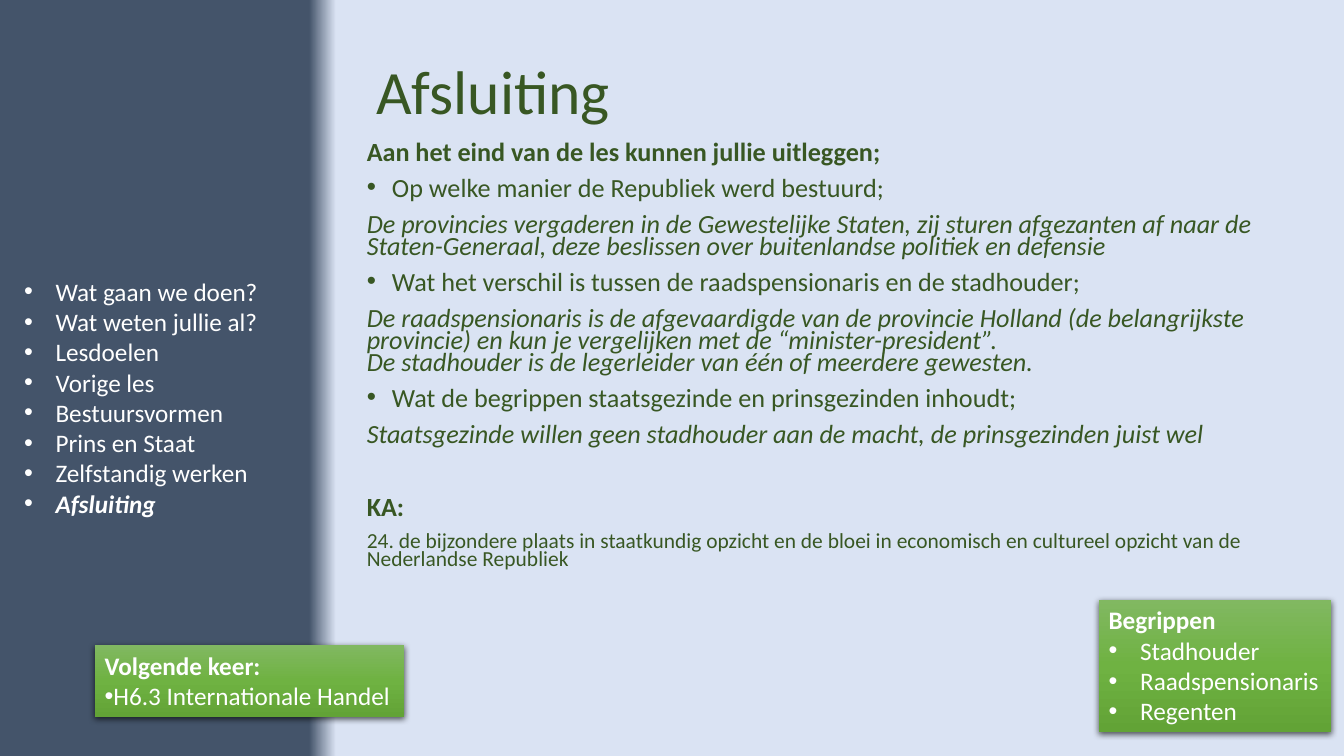
from lxml.etree import SubElement
from pptx import Presentation
from pptx.dml.color import RGBColor
from pptx.enum.shapes import MSO_SHAPE as Shape
from pptx.enum.text import MSO_ANCHOR as Anchor, MSO_AUTO_SIZE as AutoSize, PP_ALIGN as Align
from pptx.oxml.ns import qn
from pptx.util import Pt

# Content
TITLE = "Afsluiting"
AGENDA = ["Wat gaan we doen?", "Wat weten jullie al?", "Lesdoelen", "Vorige les",
          "Bestuursvormen", "Prins en Staat", "Zelfstandig werken"]
CURRENT = "Afsluiting"
INTRO = "Aan het eind van de les kunnen jullie uitleggen;"
GOALS = [
    ("Op welke manier de Republiek werd bestuurd;",
     "De provincies vergaderen in de Gewestelijke Staten, zij sturen afgezanten af naar de "
     "Staten-Generaal, deze beslissen over buitenlandse politiek en defensie"),
    ("Wat het verschil is tussen de raadspensionaris en de stadhouder;",
     "De raadspensionaris is de afgevaardigde van de provincie Holland (de belangrijkste "
     "provincie) en kun je vergelijken met de “minister-president”.\v"
     "De stadhouder is de legerleider van één of meerdere gewesten."),
    ("Wat de begrippen staatsgezinde en prinsgezinden inhoudt;",
     "Staatsgezinde willen geen stadhouder aan de macht, de prinsgezinden juist wel"),
]
KA_HEAD = "KA:"
KA_TEXT = ("24. de bijzondere plaats in staatkundig opzicht en de bloei in economisch "
           "en cultureel opzicht van de Nederlandse Republiek")
# Green cards: left, top, width, height, bullet indent, heading, items
CARDS = [
    (67.7, 460.8, 221, 51.1, 0, "Volgende keer:", ["H6.3 Internationale Handel"]),
    (784.8, 428.4, 166.3, 94.3, 22.5, "Begrippen",
     ["Stadhouder", "Raadspensionaris", "Regenten"]),
]
COLORS = {"navy": "44546A", "pale": "DAE3F3", "text": "385723", "white": "FFFFFF",
          "card_top": "81B861", "card_mid": "6FB242", "card_low": "62A336", "shadow": "000000"}
BACKDROP = [(23, "navy"), (25, "pale")]
CARD_FILL = [(0, "card_top"), (50, "card_mid"), (100, "card_low")]


def write(frame, text, size=18, color="white", bold=False, italic=False,
          bullet=False, indent=0, spacing=None, before=0):
    """Fill the empty first paragraph, or add a new one."""
    para = frame.paragraphs[0] if not frame.text else frame.add_paragraph()
    para.text = text
    para.alignment = Align.LEFT
    para.space_before = Pt(before)
    if spacing:
        para.line_spacing = spacing
    props = para._p.get_or_add_pPr()
    props.set("marL", str(Pt(indent)))
    props.set("indent", str(-Pt(indent)))
    if bullet:
        SubElement(props, qn("a:buFont"), typeface="Arial")
        SubElement(props, qn("a:buChar"), char="•")
    else:
        SubElement(props, qn("a:buNone"))
    for span in para.runs:
        font = span.font
        font.name, font.size, font.bold, font.italic = "Calibri", Pt(size), bold, italic
        font.color.rgb = RGBColor.from_string(COLORS[color])


def paint_gradient(fill, element, stops, angle):
    fill.gradient()
    fill.gradient_angle = angle
    stop_list = next(element.iter(qn("a:gsLst")))
    stop_list.clear()
    for position, color in stops:
        stop = SubElement(stop_list, qn("a:gs"), pos=str(position * 1000))
        SubElement(stop, qn("a:srgbClr"), val=COLORS[color])


def add_shadow(shape):
    shape.shadow.inherit = False
    effects = shape._element.spPr.find(qn("a:effectLst"))
    shadow = SubElement(effects, qn("a:outerShdw"), blurRad=str(Pt(4.5)), dist=str(Pt(1.5)),
                        dir="5400000", algn="ctr", rotWithShape="0")
    tone = SubElement(shadow, qn("a:srgbClr"), val=COLORS["shadow"])
    SubElement(tone, qn("a:alpha"), val="63000")


def add_text_box(page, left, top, width, height, wrap):
    frame = page.shapes.add_textbox(Pt(left), Pt(top), Pt(width), Pt(height)).text_frame
    frame.word_wrap = wrap
    return frame


def add_card(page, left, top, width, height, indent, heading, items):
    card = page.shapes.add_shape(Shape.RECTANGLE, Pt(left), Pt(top), Pt(width), Pt(height))
    paint_gradient(card.fill, card._element, CARD_FILL, 270)
    card.line.fill.background()
    add_shadow(card)
    frame = card.text_frame
    frame.word_wrap = False
    frame.auto_size = AutoSize.SHAPE_TO_FIT_TEXT
    frame.vertical_anchor = Anchor.TOP
    write(frame, heading, bold=True)
    for item in items:
        write(frame, item, bullet=True, indent=indent)


def main():
    deck = Presentation()
    deck.slide_width, deck.slide_height = Pt(960), Pt(540)
    page = deck.slides.add_slide(deck.slide_layouts[5])
    paint_gradient(page.background.fill, page.element, BACKDROP, 0)

    # Title
    title = page.shapes.title
    title.left, title.top, title.width, title.height = Pt(261.4), Pt(15.1), Pt(662.4), Pt(104.4)
    title.text_frame.vertical_anchor = Anchor.MIDDLE
    title.text_frame.auto_size = AutoSize.NONE
    write(title.text_frame, TITLE, size=44, color="text", spacing=0.9)

    # Agenda in the dark side band
    agenda = add_text_box(page, 10.1, 193.7, 183.6, 181.4, wrap=False)
    for item in AGENDA:
        write(agenda, item, bullet=True, indent=22.5)
    write(agenda, CURRENT, bullet=True, indent=22.5, bold=True, italic=True)

    # Lesson goals with their answers
    body = add_text_box(page, 254.9, 99.4, 704.9, 320.4, wrap=True)
    style = {"size": 18.7, "color": "text", "spacing": 0.7, "before": 10}
    write(body, INTRO, bold=True, **style)
    for goal, answer in GOALS:
        write(body, goal, bullet=True, indent=18, **style)
        write(body, answer, italic=True, **style)
    write(body, KA_HEAD, bold=True, **{**style, "before": 36})
    write(body, KA_TEXT, **{**style, "size": 15.3})

    # Green cards
    for card in CARDS:
        add_card(page, *card)

    deck.save("out.pptx")


if __name__ == "__main__":
    main()
